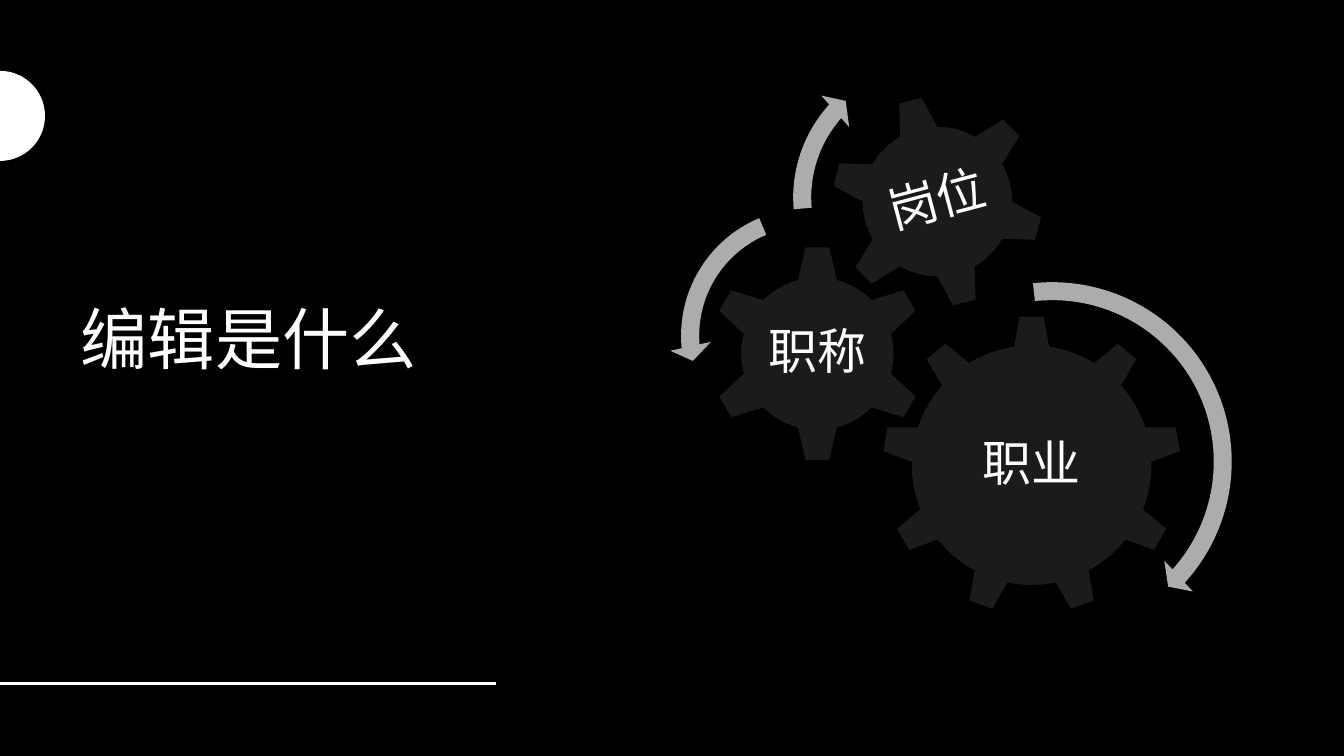
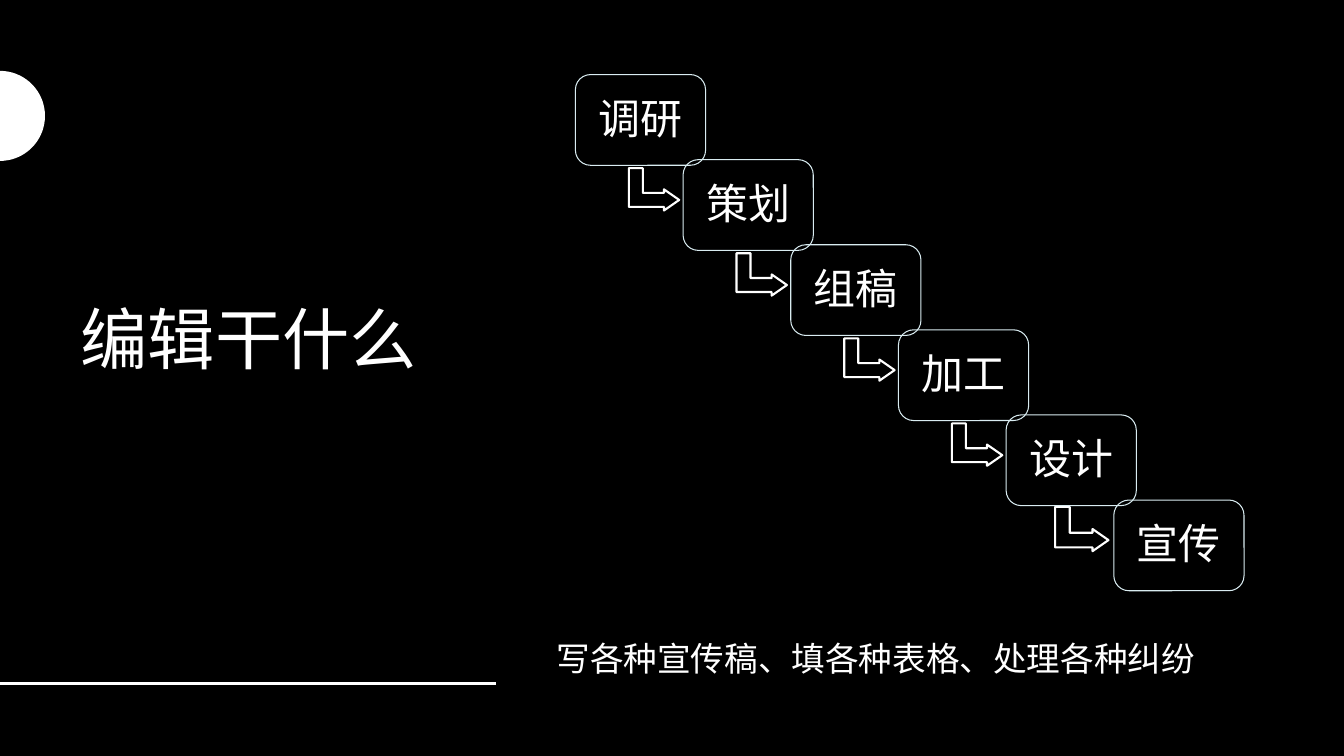
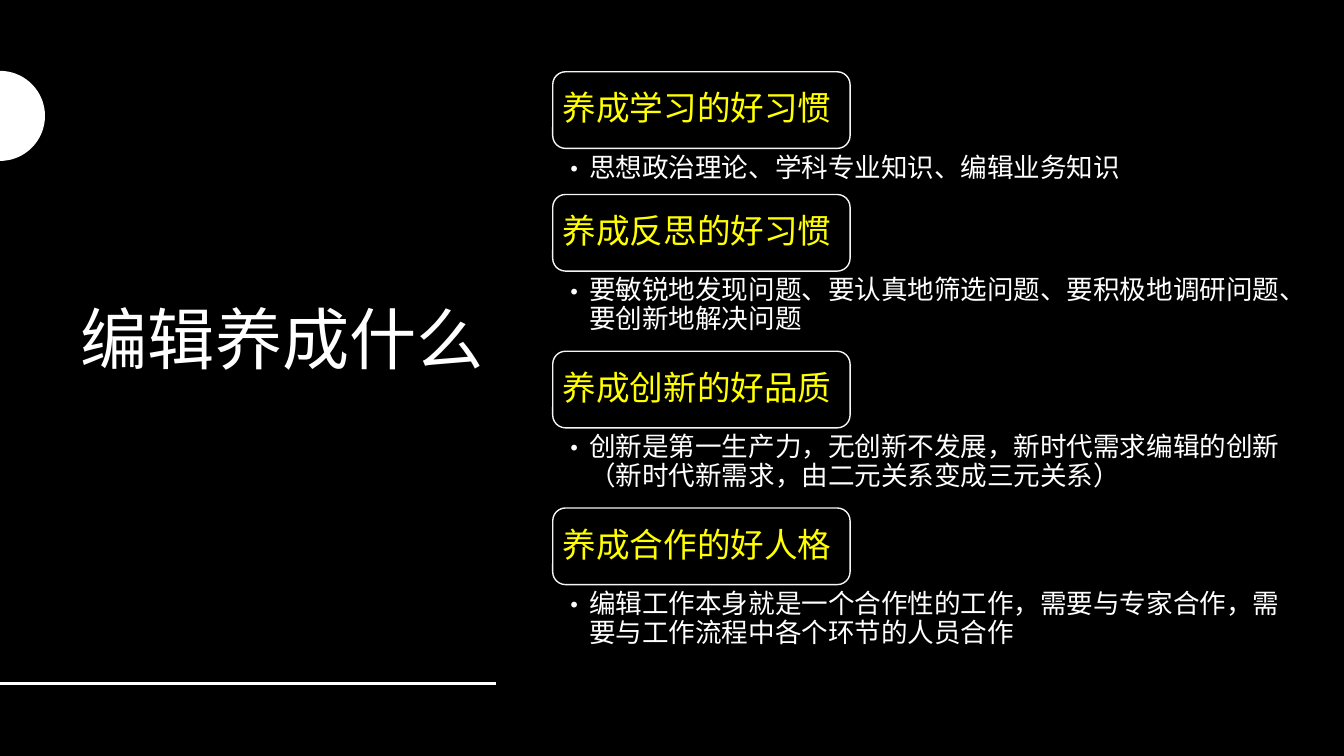
import math

from lxml import etree
from pptx import Presentation
from pptx.dml.color import RGBColor
from pptx.enum.shapes import MSO_CONNECTOR, MSO_SHAPE
from pptx.enum.text import MSO_ANCHOR, MSO_AUTO_SIZE, PP_ALIGN
from pptx.oxml.ns import qn
from pptx.util import Inches, Pt

LEFT, CENTER = PP_ALIGN.LEFT, PP_ALIGN.CENTER
TOP, MIDDLE = MSO_ANCHOR.TOP, MSO_ANCHOR.MIDDLE
ROUNDED = MSO_SHAPE.ROUNDED_RECTANGLE
BENT_ARROW = MSO_SHAPE.BENT_UP_ARROW
CLOCKWISE, COUNTERCLOCKWISE = MSO_SHAPE.CIRCULAR_ARROW, MSO_SHAPE.LEFT_CIRCULAR_ARROW
GEAR_6, GEAR_9 = MSO_SHAPE.GEAR_6, MSO_SHAPE.GEAR_9

COLORS = {
    "background": "000000",
    "text": "FFFFFF",
    "gear": "1D1A1D",
    "gear arrow": "ACACAC",
    "step": "D9ECF1",
    "heading": "FFFF00",
    "heading line": "F5F5F5",
}
RGB = {name: RGBColor.from_string(value) for name, value in COLORS.items()}
TITLE_FONT, BODY_FONT = "Cambria", "Cabin"

# The slide is a grid of 160 columns and 90 rows of square cells.
CELL = Inches(1) / 12
COLUMNS, ROWS = 160, 90


def add_shape(slide, kind, box, fill=None, line=None, width=1):
    """Add a preset shape; box is left, top, width and height in cells."""
    shape = slide.shapes.add_shape(kind, *(round(length * CELL) for length in box))
    shape.shadow.inherit = False
    if fill:
        shape.fill.solid()
        shape.fill.fore_color.rgb = RGB[fill]
    else:
        shape.fill.background()
    if line:
        shape.line.color.rgb = RGB[line]
        shape.line.width = Pt(width)
    else:
        shape.line.fill.background()
    return shape


def write(shape, text, size, color="text", font=BODY_FONT, align=CENTER, anchor=MIDDLE,
          margins=(0.6, 0.6, 0.6, 0.6), spacing=0.9, wrap=True):
    """Fill a shape with one paragraph; margins are left, top, right, bottom in cells."""
    frame = shape.text_frame
    frame.text = text
    frame.word_wrap = wrap
    frame.auto_size = MSO_AUTO_SIZE.NONE
    frame.vertical_anchor = anchor
    (frame.margin_left, frame.margin_top,
     frame.margin_right, frame.margin_bottom) = (round(m * CELL) for m in margins)
    paragraph = frame.paragraphs[0]
    paragraph.alignment = align
    paragraph.line_spacing = spacing
    run_font = paragraph.runs[0].font
    run_font.size = Pt(size)
    run_font.name = font
    run_font.color.rgb = RGB[color]
    return paragraph


presentation = Presentation()
presentation.slide_width = round(COLUMNS * CELL)
presentation.slide_height = round(ROWS * CELL)

background = presentation.slide_master.background.fill
background.solid()
background.fore_color.rgb = RGB["background"]

layout = presentation.slide_layouts[5]
layout_title = layout.placeholders[0]
layout_title.left = layout_title.top = round(8.4 * CELL)
layout_title.width, layout_title.height = round(51.6 * CELL), round(64.8 * CELL)

# Frame shared by all slides: title, half disc at the left edge, bottom rule
HALF_DISC_CENTER, HALF_DISC_RADIUS = 13.8, 5.36
RULE_ROW, RULE_END = 81.4, 59
slides = []
for title in ("编辑是什么", "编辑干什么", "编辑养成什么"):
    slide = presentation.slides.add_slide(layout)
    write(slide.shapes.title, title, 48, font=TITLE_FONT, align=LEFT,
          margins=(1.2, 0.6, 1.2, 0.6))

    arc = [(HALF_DISC_RADIUS * math.cos(math.radians(angle)) * CELL,
            (HALF_DISC_CENTER + HALF_DISC_RADIUS * math.sin(math.radians(angle))) * CELL)
           for angle in range(-90, 91, 4)]
    builder = slide.shapes.build_freeform(*arc[0])
    builder.add_line_segments(arc[1:], close=True)
    half_disc = builder.convert_to_shape()
    half_disc.shadow.inherit = False
    half_disc.fill.solid()
    half_disc.fill.fore_color.rgb = RGB["text"]
    half_disc.line.fill.background()

    rule_y = round(RULE_ROW * CELL)
    rule = slide.shapes.add_connector(
        MSO_CONNECTOR.STRAIGHT, 0, rule_y, round(RULE_END * CELL), rule_y)
    rule.line.color.rgb = RGB["text"]
    rule.line.width = Pt(2)
    etree.SubElement(rule._element.spPr, qn("a:effectLst"))
    slides.append(slide)

gear_slide, steps_slide, habits_slide = slides

# Gears: kind, left, top, size, rotation, label, top margin of the label
gears = [
    (GEAR_9, 105, 37.56, 35.64, 0, "职业", 1.3),
    (GEAR_6, 84.36, 29.16, 25.92, 0, "职称", 0.6),
    (GEAR_6, 98.88, 11.28, 25.44, 345, "岗位", 0.6),
]
for kind, left, top, size, rotation, label, top_margin in gears:
    gear = add_shape(gear_slide, kind, (left, top, size, size), fill="gear")
    gear.rotation = rotation
    write(gear, label, 35, margins=(0.6, top_margin, 0.6, 0.6), wrap=False)

# Turning arrows: kind, left, top, size, adjustments in percent
turning_arrows = [
    (CLOCKWISE, 102.48, 32.16, 45.6, (4.7, 299, 2531.4, 15828.7, 5.5)),
    (COUNTERCLOCKWISE, 79.68, 23.4, 33.12, (6.5, 430, 10489.1, 14837.8, 7.5)),
    (CLOCKWISE, 93, 5.64, 35.76, (6, 394.1, 13313.8, 10508.2, 7)),
]
for kind, left, top, size, adjustments in turning_arrows:
    arrow = add_shape(gear_slide, kind, (left, top, size, size), fill="gear arrow")
    for index, percent in enumerate(adjustments):
        arrow.adjustments[index] = percent / 100

# Staircase of work steps; the last arrow is slightly larger
steps = ["调研", "策划", "组稿", "加工", "设计", "宣传"]
ARROW_BOX, LAST_ARROW_BOX = (6.84, 10.66, 5.04, 6), (6.36, 10.4, 5.28, 6.36)
for index, step in enumerate(steps):
    left, top = 68.5 + index * 12.82, 8.88 + index * 10.13
    if index < len(steps) - 1:
        x, y, width, height = LAST_ARROW_BOX if index == len(steps) - 2 else ARROW_BOX
        arrow = add_shape(steps_slide, BENT_ARROW, (left + x, top + y, width, height),
                          fill="background", line="text", width=1.5)
        arrow.rotation = 90
        for position, value in enumerate((0.33, 0.25, 0.36)):
            arrow.adjustments[position] = value
    box = add_shape(steps_slide, ROUNDED, (left, top, 15.5, 10.8), line="step", width=0.75)
    write(box, step, 30, margins=(0.6, 0.8, 0.6, 0.6))

note = steps_slide.shapes.add_textbox(
    *(round(length * CELL) for length in (65.08, 75.36, 79.7, 6)))
write(note, "写各种宣传稿、填各种表格、处理各种纠纷", 24, align=LEFT, anchor=TOP,
      margins=(1.2, 0.6, 1.2, 0.6), spacing=1)

# Habits: heading, detail, lines the detail takes
habits = [
    ("养成学习的好习惯", "思想政治理论、学科专业知识、编辑业务知识", 1),
    ("养成反思的好习惯",
     "要敏锐地发现问题、要认真地筛选问题、要积极地调研问题、要创新地解决问题", 2),
    ("养成创新的好品质",
     "创新是第一生产力，无创新不发展，新时代需求编辑的创新（新时代新需求，由二元关系变成三元关系）", 2),
    ("养成合作的好人格",
     "编辑工作本身就是一个合作性的工作，需要与专家合作，需要与工作流程中各个环节的人员合作", 2),
]
HEADING_HEIGHT, DETAIL_OFFSET, LINE_HEIGHT = 9.12, 9.4, 4.05
BULLET_INDENT = round(2.28 * CELL)
top = 8.55
for heading, detail, lines in habits:
    box = add_shape(habits_slide, ROUNDED, (65.8, top, 35.4, HEADING_HEIGHT),
                    line="heading line")
    write(box, heading, 24, color="heading", align=LEFT, margins=(0.75, 0.6, 0.75, 0.6))

    detail_height = 1.16 + lines * LINE_HEIGHT
    detail_box = habits_slide.shapes.add_textbox(
        *(round(length * CELL) for length in (65, top + DETAIL_OFFSET, 90.7, detail_height)))
    paragraph = write(detail_box, detail, 19, align=LEFT, anchor=TOP,
                      margins=(2.88, 0.4, 2.28, 0.36))
    properties = paragraph._p.get_or_add_pPr()
    properties.set("marL", str(BULLET_INDENT))
    properties.set("indent", str(-BULLET_INDENT))
    etree.SubElement(properties, qn("a:buFont"), typeface=BODY_FONT)
    etree.SubElement(properties, qn("a:buChar"), char="•")
    top += DETAIL_OFFSET + detail_height

presentation.save("out.pptx")
